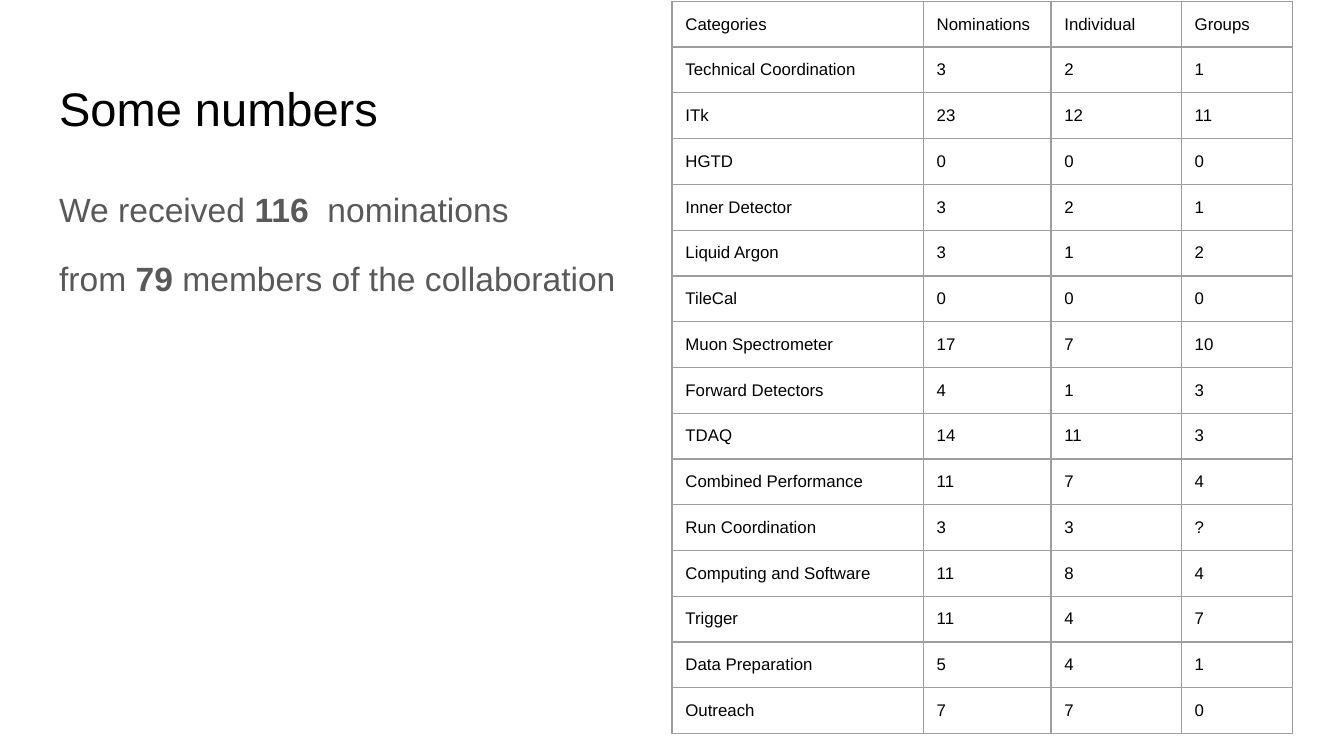
import pptx
import pptx.dml.color
import pptx.enum.text
import pptx.oxml
import pptx.oxml.ns
import pptx.util
from dataclasses import dataclass

Inches = pptx.util.Inches
Pt = pptx.util.Pt


@dataclass(frozen=True)
class Theme:
    font: str = "Arial"
    ink: str = "000000"
    muted: str = "595959"
    grid: str = "9E9E9E"
    title_size: float = 25.2
    body_size: float = 18
    table_size: float = 9
    grid_width: float = 0.75


theme = Theme()


def style_run(run, size, color, bold=False):
    run.font.name = theme.font
    run.font.size = Pt(size)
    run.font.bold = bold
    run.font.color.rgb = pptx.dml.color.RGBColor.from_string(color)


def set_frame(frame):
    frame.word_wrap = True
    frame.auto_size = pptx.enum.text.MSO_AUTO_SIZE.NONE
    frame.vertical_anchor = pptx.enum.text.MSO_ANCHOR.TOP
    frame.margin_left = frame.margin_right = Inches(0.1)
    frame.margin_top = frame.margin_bottom = Inches(0.1)


# Widescreen 16:9 slide
presentation = pptx.Presentation()
presentation.slide_width = Inches(10)
presentation.slide_height = Inches(10) * 9 // 16
slide = presentation.slides.add_slide(presentation.slide_layouts[1])

# Title
title = slide.shapes.title
title.left, title.top = Inches(0.34), Inches(0.49)
title.width, title.height = Inches(9.32), Inches(0.63)
set_frame(title.text_frame)
title.text_frame.text = "Some numbers"
heading = title.text_frame.paragraphs[0]
heading.alignment = pptx.enum.text.PP_ALIGN.LEFT
style_run(heading.runs[0], theme.title_size, theme.ink)

# Summary: each line is lead-in, bold count, ending
summary_lines = [
    ("We received ", "116", "  nominations"),
    ("from ", "79", " members of the collaboration"),
]
summary = slide.placeholders[1]
summary.left, summary.top = Inches(0.34), Inches(1.26)
summary.width, summary.height = Inches(9.32), Inches(3.74)
set_frame(summary.text_frame)
for index, parts in enumerate(summary_lines):
    line = summary.text_frame.paragraphs[0] if index == 0 else summary.text_frame.add_paragraph()
    line.line_spacing = 1.15
    line.space_before = Pt(12 if index else 0)
    line.space_after = Pt(0)
    properties = line._p.get_or_add_pPr()
    properties.set("marL", "0")
    properties.set("indent", "0")
    properties.append(pptx.oxml.parse_xml(f'<a:buNone {pptx.oxml.ns.nsdecls("a")}/>'))
    for position, part in enumerate(parts):
        run = line.add_run()
        run.text = part
        style_run(run, theme.body_size, theme.muted, bold=position == 1)

# Nominations by category
nominations = [
    ("Categories", "Nominations", "Individual", "Groups"),
    ("Technical Coordination", 3, 2, 1),
    ("ITk", 23, 12, 11),
    ("HGTD", 0, 0, 0),
    ("Inner Detector", 3, 2, 1),
    ("Liquid Argon", 3, 1, 2),
    ("TileCal", 0, 0, 0),
    ("Muon Spectrometer", 17, 7, 10),
    ("Forward Detectors", 4, 1, 3),
    ("TDAQ", 14, 11, 3),
    ("Combined Performance", 11, 7, 4),
    ("Run Coordination", 3, 3, "?"),
    ("Computing and Software", 11, 8, 4),
    ("Trigger", 11, 4, 7),
    ("Data Preparation", 5, 4, 1),
    ("Outreach", 7, 7, 0),
]
column_widths = [1.87, 0.95, 0.97, 0.83]
row_height = 0.3  # rows grow to fit their text
nominations_frame = slide.shapes.add_table(
    len(nominations), len(column_widths), Inches(5), Inches(0.01),
    Inches(sum(column_widths)), Inches(row_height * len(nominations)),
)
table = nominations_frame.table
table.first_row = False
table.horz_banding = False
for column, width in zip(table.columns, column_widths):
    column.width = Inches(width)

for row, values in zip(table.rows, nominations):
    row.height = Inches(row_height)
    for cell, value in zip(row.cells, values):
        cell.margin_left = cell.margin_right = Inches(0.1)
        cell.margin_top = cell.margin_bottom = Inches(0.1)
        cell.text_frame.text = str(value)
        style_run(cell.text_frame.paragraphs[0].runs[0], theme.table_size, theme.ink)

        # Borders come before the fill in the cell properties
        for side in ("lnL", "lnR", "lnT", "lnB"):
            cell._tc.get_or_add_tcPr().append(pptx.oxml.parse_xml(
                f'<a:{side} {pptx.oxml.ns.nsdecls("a")} w="{Pt(theme.grid_width)}">'
                f'<a:solidFill><a:srgbClr val="{theme.grid}"/></a:solidFill></a:{side}>'
            ))
        cell.fill.background()
nominations_frame.height = Inches(5.6)

presentation.save("out.pptx")
